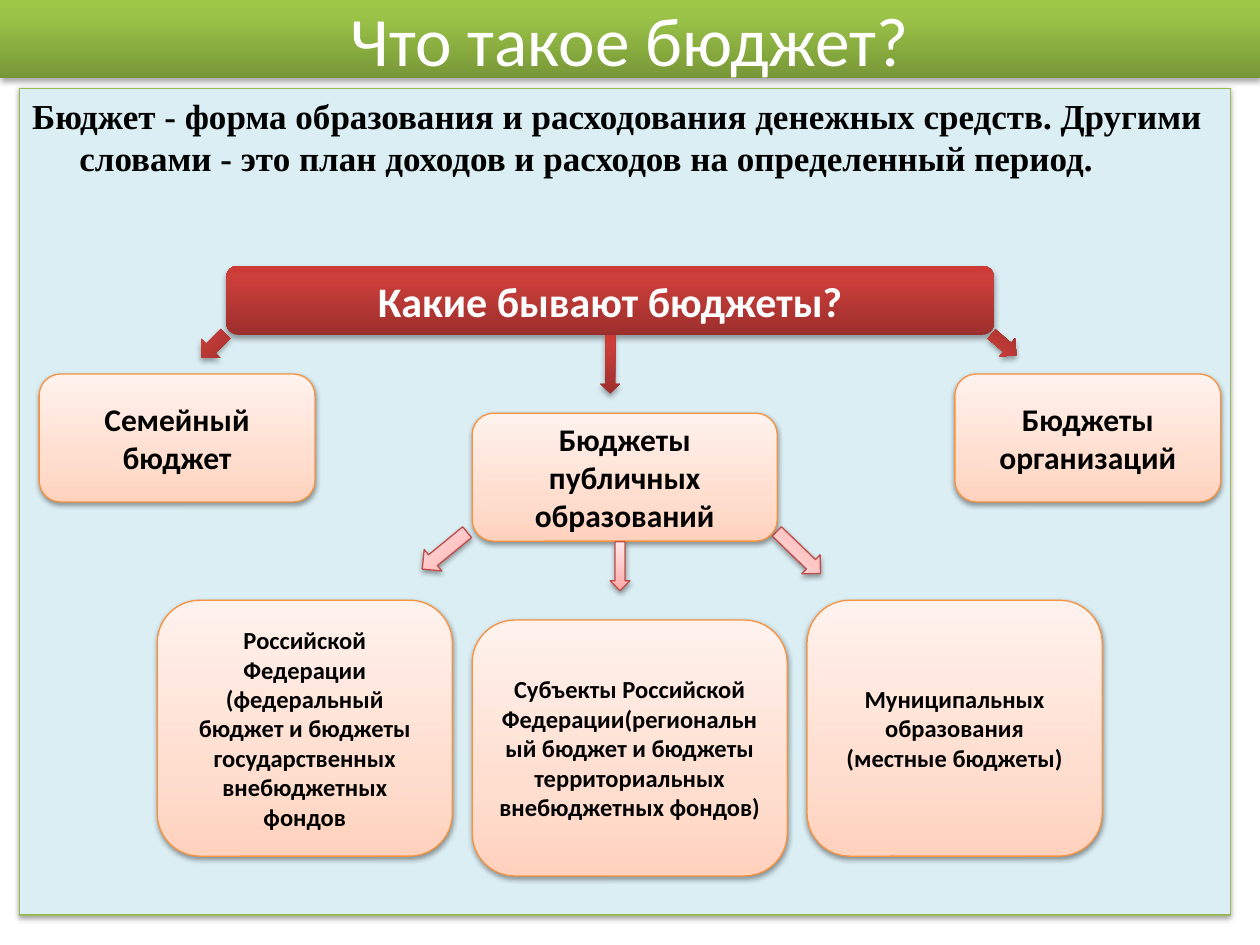
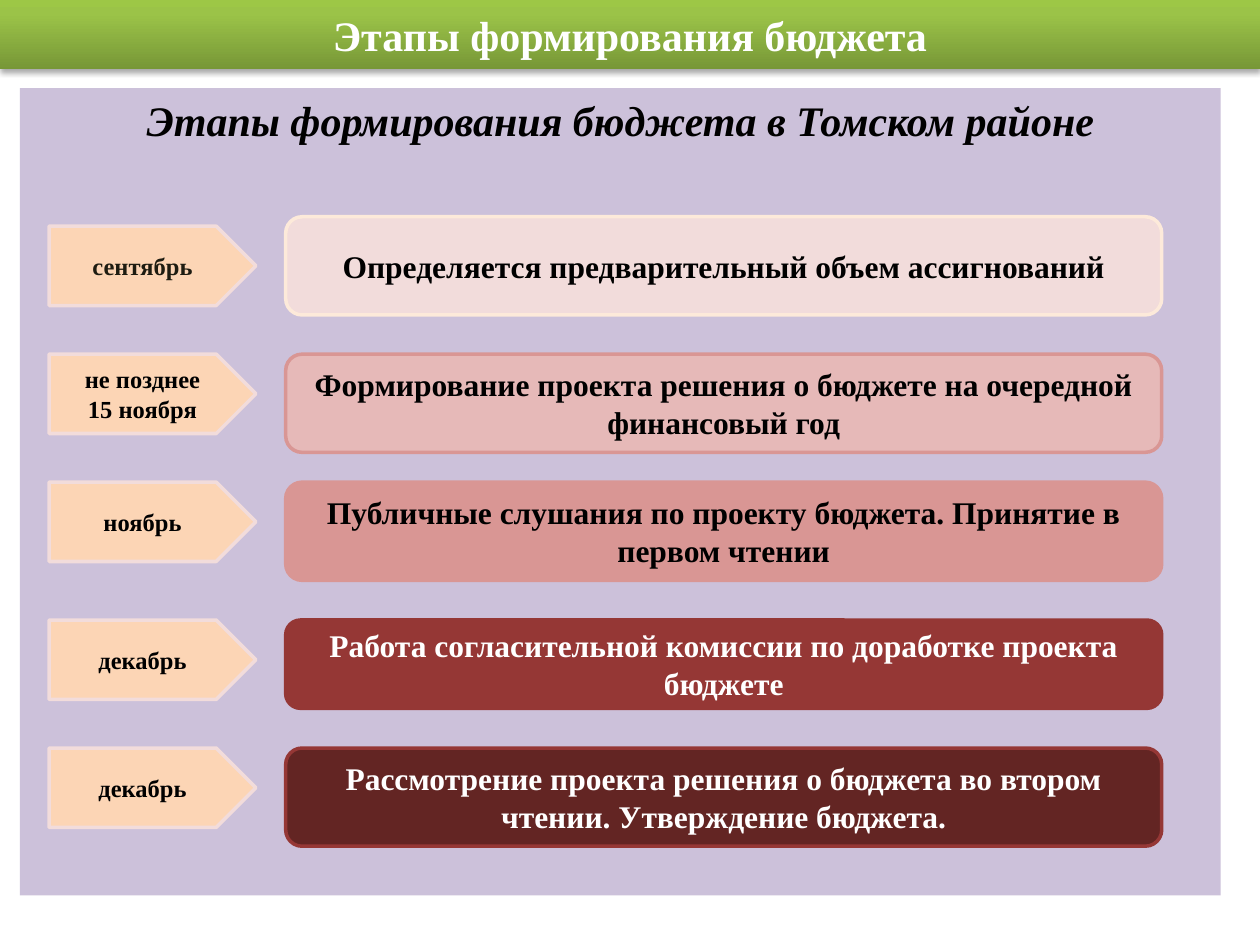
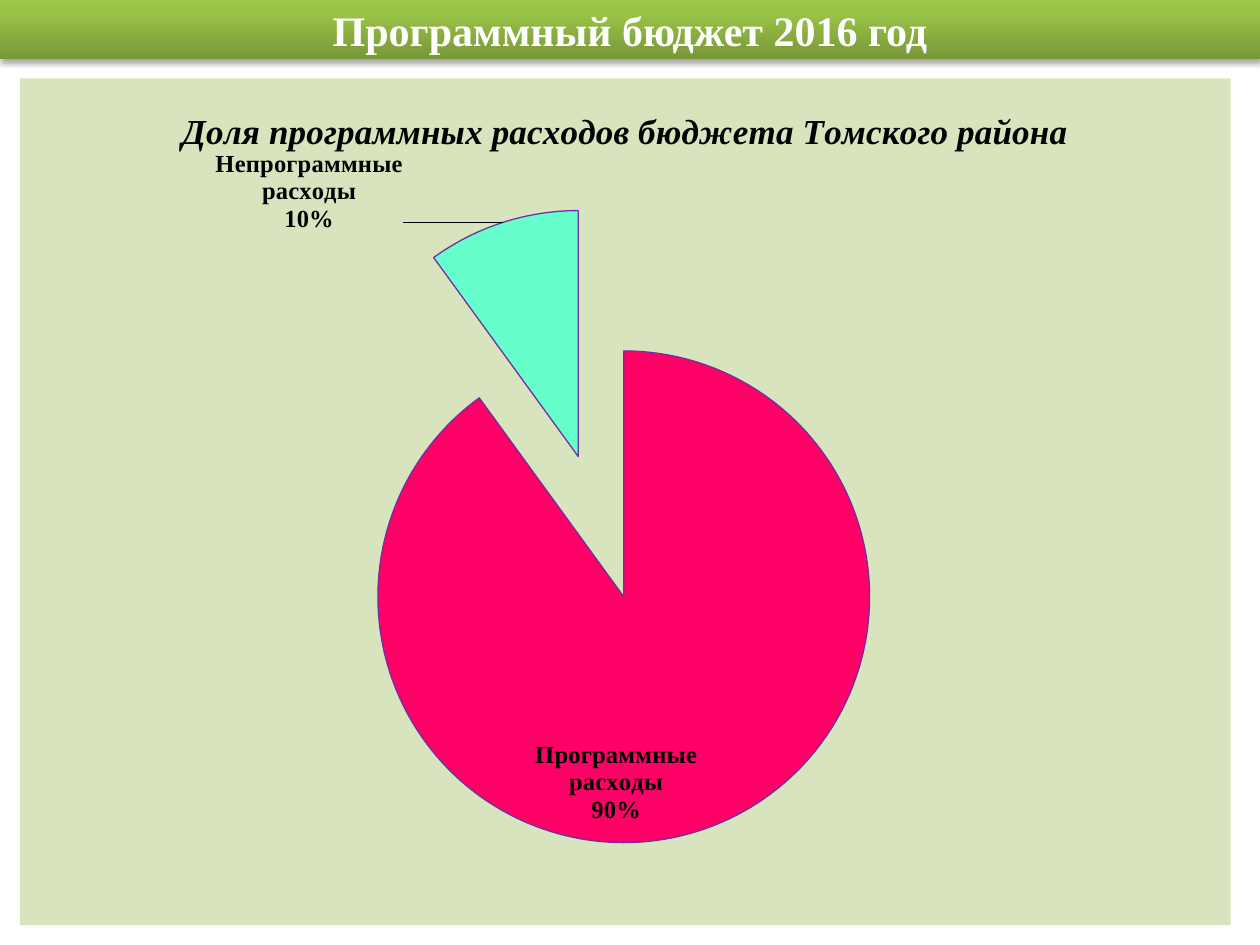
from copy import deepcopy

from lxml import etree
from pptx import Presentation
from pptx.chart.data import CategoryChartData
from pptx.dml.color import RGBColor
from pptx.enum.chart import XL_CHART_TYPE, XL_LABEL_POSITION
from pptx.enum.shapes import MSO_SHAPE
from pptx.enum.text import MSO_ANCHOR, PP_ALIGN
from pptx.oxml import parse_xml
from pptx.oxml.ns import nsdecls, qn
from pptx.util import Cm, Pt

RECT, ROUND = MSO_SHAPE.RECTANGLE, MSO_SHAPE.ROUNDED_RECTANGLE
PENTAGON = MSO_SHAPE.PENTAGON
LEFT_ARROW, DOWN_ARROW = MSO_SHAPE.LEFT_ARROW, MSO_SHAPE.DOWN_ARROW
LEFT, CENTER = PP_ALIGN.LEFT, PP_ALIGN.CENTER
TOP, MIDDLE = MSO_ANCHOR.TOP, MSO_ANCHOR.MIDDLE
PIE = XL_CHART_TYPE.PIE
INSIDE_END = XL_LABEL_POSITION.INSIDE_END


class Theme:
    sans, serif = "Calibri", "Times New Roman"
    black, white, ink = "000000", "FFFFFF", "1E1C11"
    # gradient stops run from the bottom edge to the top edge
    green = [(0, "779737"), (80, "9BC348"), (100, "9DC746")]
    red = [(0, "9C2F2D"), (80, "CB3E3A"), (100, "CE3B37")]
    peach = [(0, "FFD2BD"), (35, "FFDED0"), (100, "FFF2ED")]
    pink = [(0, "FFA6A5"), (35, "FFC0BF"), (100, "FFE7E7")]
    # shadow: opacity %, distance pt
    strong, soft = (35, 1.8), (38, 1.6)
    band = {"fill": green, "shadow": strong}
    red_box = {"fill": red, "shadow": strong}
    peach_box = {"fill": peach, "line": ("F69240", 0.75), "shadow": soft}
    pink_box = {"fill": pink, "line": ("BF4C48", 0.75), "shadow": soft}
    blue_panel = {"fill": "DBEEF4", "line": ("98B955", 0.75), "shadow": soft}
    lilac_panel = {"fill": "CCC1DA"}
    month = {"fill": "FCD5B5", "line": ("F2DCDB", 2)}
    chart_fill, slice_line = "D7E4BD", "7030A0"
    slices = ["FF0066", "66FFCC"]
    title = {"name": serif, "size": Pt(24), "bold": True}
    big_title = {"name": sans, "size": Pt(39.6)}
    intro = {"name": serif, "size": Pt(20), "bold": True}
    heading = {"name": serif, "size": Pt(24), "bold": True, "italic": True}
    chart_title = {"name": serif, "size": Pt(20), "bold": True, "italic": True}
    question = {"name": sans, "size": Pt(24), "bold": True}
    kind = {"name": sans, "size": Pt(18), "bold": True}
    level = {"name": sans, "size": Pt(14), "bold": True}
    stage = {"name": serif, "size": Pt(18), "bold": True}
    small = {"name": serif, "size": Pt(14), "bold": True}


def style_font(font, values, color):
    for key, value in values.items():
        setattr(font, key, value)
    font.color.rgb = RGBColor.from_string(color)


def add_box(s, preset, at, look, text="", font=None, color=Theme.black,
            align=CENTER, anchor=MIDDLE, hang=0):
    """Add a shape; at is left, top, width, height in cm, each text line a paragraph."""
    sp = s.shapes.add_shape(preset, *map(Cm, at))
    fill = look["fill"]
    if isinstance(fill, str):
        sp.fill.solid()
        sp.fill.fore_color.rgb = RGBColor.from_string(fill)
    else:
        sp.fill.gradient()
        sp.fill.gradient_angle = 90
        stops = sp._element.spPr.find(qn("a:gradFill")).find(qn("a:gsLst"))
        for old in list(stops):
            stops.remove(old)
        for pos, stop_color in fill:
            gs = etree.SubElement(stops, qn("a:gs"), pos=str(pos * 1000))
            etree.SubElement(gs, qn("a:srgbClr"), val=stop_color)
    if "line" in look:
        line_color, width = look["line"]
        sp.line.color.rgb = RGBColor.from_string(line_color)
        sp.line.width = Pt(width)
    else:
        sp.line.fill.background()
    sp.shadow.inherit = False
    if "shadow" in look:
        opacity, dist = look["shadow"]
        outer = etree.SubElement(
            sp._element.spPr.find(qn("a:effectLst")), qn("a:outerShdw"),
            blurRad=str(Pt(3.1)), dist=str(Pt(dist)), dir="5400000", rotWithShape="0")
        clr = etree.SubElement(outer, qn("a:srgbClr"), val=Theme.black)
        etree.SubElement(clr, qn("a:alpha"), val=str(opacity * 1000))
    if text:
        tf = sp.text_frame
        tf.word_wrap = True
        tf.vertical_anchor = anchor
        for i, row in enumerate(text.split("\n")):
            p = tf.add_paragraph() if i else tf.paragraphs[0]
            p.alignment = align
            if hang:
                pPr = p._p.get_or_add_pPr()
                pPr.set("marL", str(Cm(hang)))
                pPr.set("indent", str(-Cm(hang)))
            r = p.add_run()
            r.text = row
            style_font(r.font, font, color)
    return sp


prs = Presentation()
prs.slide_width, prs.slide_height = Cm(25.4), Cm(19.05)

# Every slide opens with a green title band
slides = []
for title, height, font in [
    ("Что такое бюджет?", 1.58, Theme.big_title),
    ("Этапы формирования бюджета", 1.4, Theme.title),
    ("Программный бюджет 2016 год", 1.2, Theme.title),
]:
    s = prs.slides.add_slide(prs.slide_layouts[6])
    add_box(s, RECT, (0, 0, 25.4, height), Theme.band, title, font, Theme.white)
    slides.append(s)
kinds_slide, stages_slide, share_slide = slides

# Slide 1: kinds of budget
s = kinds_slide
add_box(s, RECT, (0.4, 1.78, 24.41, 16.67), Theme.blue_panel,
        "Бюджет - форма образования и расходования денежных средств. "
        "Другими словами - это план доходов и расходов на определенный период.",
        Theme.intro, align=LEFT, anchor=TOP, hang=0.95)
add_box(s, ROUND, (4.56, 5.36, 15.48, 1.39), Theme.red_box,
        "Какие бывают бюджеты?", Theme.question, Theme.white)

for left, top, width, text in [
    (0.79, 7.54, 5.56, "Семейный бюджет"),
    (9.52, 8.33, 6.15, "Бюджеты публичных образований"),
    (19.25, 7.54, 5.36, "Бюджеты организаций"),
]:
    add_box(s, ROUND, (left, top, width, 2.58), Theme.peach_box, text, Theme.kind)

for left, top, width, text in [
    (3.17, 12.1, 5.95, "Российской Федерации (федеральный бюджет и бюджеты "
                       "государственных внебюджетных фондов"),
    (9.52, 12.5, 6.35, "Субъекты Российской Федерации(региональный бюджет и "
                       "бюджеты территориальных внебюджетных фондов)"),
    (16.27, 12.1, 5.95, "Муниципальных образования\n(местные бюджеты)"),
]:
    add_box(s, ROUND, (left, top, width, 5.16), Theme.peach_box, text, Theme.level)

for preset, at, rotation, look in [
    (LEFT_ARROW, (3.96, 6.7, 0.69, 0.54), 315, Theme.red_box),
    (DOWN_ARROW, (12.1, 6.75, 0.4, 1.19), 0, Theme.red_box),
    (LEFT_ARROW, (19.91, 6.7, 0.66, 0.49), 220.6, Theme.red_box),
    (LEFT_ARROW, (8.38, 10.82, 1.17, 0.56), 320.6, Theme.pink_box),
    (DOWN_ARROW, (12.3, 10.92, 0.4, 0.99), 0, Theme.pink_box),
    (LEFT_ARROW, (15.49, 10.87, 1.22, 0.53), 223.9, Theme.pink_box),
]:
    add_box(s, preset, at, look).rotation = rotation

# Slide 2: stages, one row per month
s = stages_slide
add_box(s, RECT, (0.4, 1.78, 24.21, 16.27), Theme.lilac_panel,
        "Этапы формирования бюджета в Томском районе",
        Theme.heading, anchor=TOP, hang=0.95)
for month, month_top, month_color, stage, top, height, fill, line, color in [
    ("сентябрь", 4.56, Theme.ink, "Определяется предварительный объем ассигнований",
     4.37, 1.98, "F2DCDB", "FDEADA", Theme.black),
    ("не позднее\n15 ноября", 7.14, Theme.black,
     "Формирование проекта решения о бюджете на очередной финансовый год",
     7.14, 1.98, "E6B9B8", "D99694", Theme.black),
    ("ноябрь", 9.72, Theme.black,
     "Публичные слушания по проекту бюджета. Принятие в первом чтении",
     9.72, 1.98, "D99694", "D99694", Theme.black),
    ("декабрь", 12.5, Theme.black,
     "Работа согласительной комиссии по доработке проекта бюджете",
     12.5, 1.78, "953735", "953735", Theme.white),
    ("декабрь", 15.08, Theme.black,
     "Рассмотрение проекта решения о бюджета во втором чтении. Утверждение бюджета.",
     15.08, 1.98, "632523", "953735", Theme.white),
]:
    add_box(s, ROUND, (5.76, top, 17.66, height), {"fill": fill, "line": (line, 2)},
            stage, Theme.stage, color)
    add_box(s, PENTAGON, (0.99, month_top, 4.17, 1.6), Theme.month,
            month, Theme.small, month_color)

# Slide 3: share of programme spending
s = share_slide
chart_name = "Доля программных расходов бюджета Томского района"
data = CategoryChartData()
data.categories = ["Программные расходы", "Непрограммные расходы"]
data.add_series(chart_name, (90, 10))
chart = s.shapes.add_chart(PIE, Cm(0.4), Cm(1.58), Cm(24.41), Cm(17.07), data).chart
style_font(chart.font, {"name": Theme.sans, "size": Pt(18)}, Theme.black)
chart.has_legend = False
chart.has_title = True
r = chart.chart_title.text_frame.paragraphs[0].add_run()
r.text = chart_name
style_font(r.font, Theme.chart_title, Theme.black)
chart.chart_title.include_in_layout = False

space = chart._chartSpace
space.find(qn("c:txPr")).addprevious(parse_xml(
    f'<c:spPr {nsdecls("c", "a")}><a:solidFill><a:srgbClr val="{Theme.chart_fill}"/>'
    '</a:solidFill><a:ln><a:noFill/></a:ln></c:spPr>'))

area = space.chart.plotArea
for old in area.findall(qn("c:layout")):
    area.remove(old)
layout = etree.Element(qn("c:layout"))
manual = etree.SubElement(layout, qn("c:manualLayout"))
for key, value in {"layoutTarget": "inner", "xMode": "edge", "yMode": "edge",
                   "x": 0.065, "y": 0.152, "w": 0.83, "h": 0.755}.items():
    etree.SubElement(manual, qn(f"c:{key}"), val=str(value))
area.insert(0, layout)

plot = chart.plots[0]
plot.vary_by_categories = True
series = plot.series[0]
for i, color in enumerate(Theme.slices):
    fmt = series.points[i].format
    fmt.fill.solid()
    fmt.fill.fore_color.rgb = RGBColor.from_string(color)
    fmt.line.color.rgb = RGBColor.from_string(Theme.slice_line)
    fmt.line.width = Pt(0.75)
explosion = etree.Element(qn("c:explosion"), val="30")
series._element.find(qn("c:dPt")).addprevious(explosion)

labels = series.data_labels
for key, value in {"show_value": False, "show_percentage": True,
                   "show_category_name": True, "number_format": "0%",
                   "number_format_is_linked": False, "position": INSIDE_END}.items():
    setattr(labels, key, value)
style_font(labels.font, Theme.small, Theme.black)
dLbls = labels._element
separator = etree.Element(qn("c:separator"))
separator.text = "\n"
dLbls.find(qn("c:showBubbleSize")).addnext(separator)

# The small slice carries its label outside, moved left on a leader line
dLbl = etree.Element(qn("c:dLbl"))
etree.SubElement(dLbl, qn("c:idx"), val="1")
manual = etree.SubElement(etree.SubElement(dLbl, qn("c:layout")), qn("c:manualLayout"))
for key, value in {"x": -0.08, "y": 0.02}.items():
    etree.SubElement(manual, qn(f"c:{key}"), val=str(value))
for part in dLbls:
    if part.tag != qn("c:showLeaderLines"):
        dLbl.append(deepcopy(part))
dLbl.find(qn("c:dLblPos")).set("val", "outEnd")
dLbls.insert(0, dLbl)

prs.save("out.pptx")
